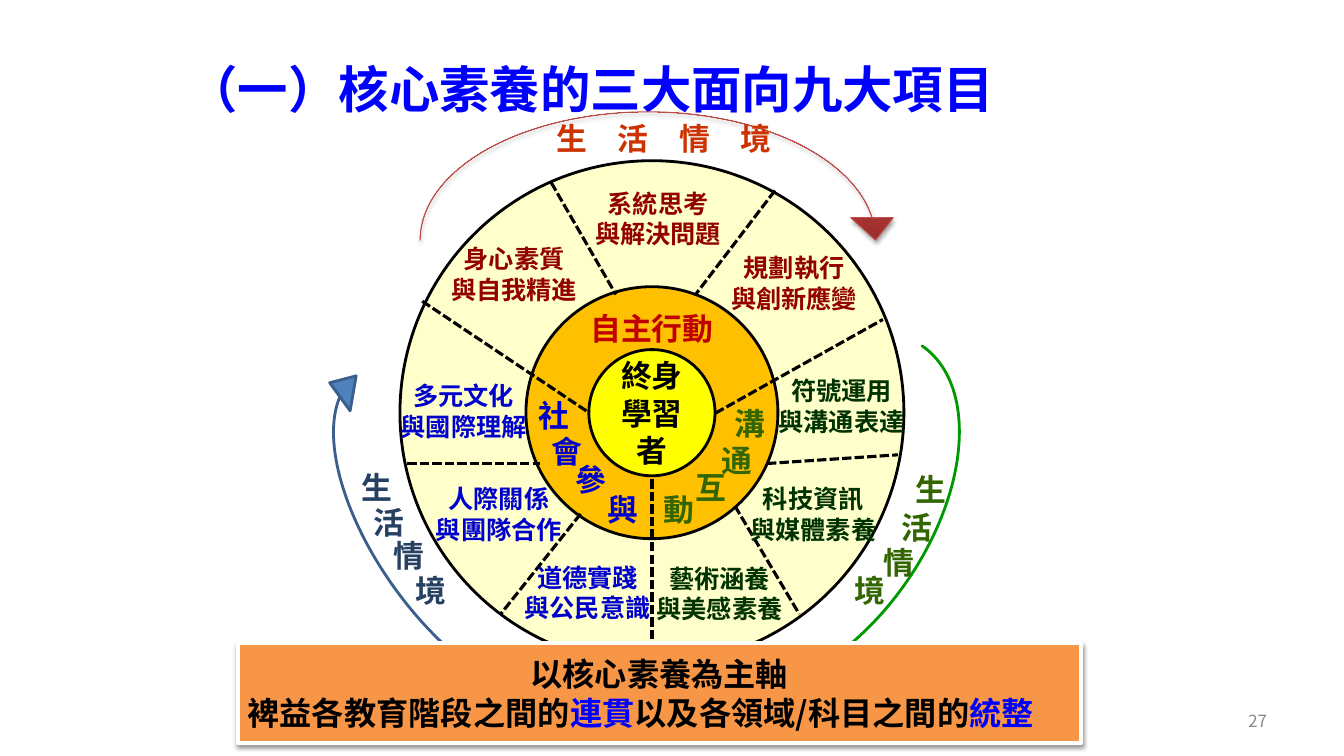
from lxml.etree import SubElement
from pptx import Presentation
from pptx.dml.color import RGBColor
from pptx.enum.dml import MSO_LINE
from pptx.enum.shapes import MSO_CONNECTOR, MSO_SHAPE
from pptx.enum.text import MSO_ANCHOR, PP_ALIGN
from pptx.oxml.ns import qn
from pptx.util import Cm, Pt

FONT = "Noto Sans CJK SC"
LINE_HEIGHT = 1.22
BLACK = RGBColor(0x00, 0x00, 0x00)
WHITE = RGBColor(0xFF, 0xFF, 0xFF)
GRAY = RGBColor(0x89, 0x89, 0x89)
BLUE = RGBColor(0x00, 0x00, 0xFF)
INK_BLUE = RGBColor(0x00, 0x00, 0xCC)
NAVY = RGBColor(0x25, 0x40, 0x61)
STEEL = RGBColor(0x4F, 0x81, 0xBD)
STEEL_EDGE = RGBColor(0x3A, 0x5F, 0x8C)
GREEN = RGBColor(0x00, 0x99, 0x00)
LEAF = RGBColor(0x33, 0x66, 0x00)
FOREST = RGBColor(0x00, 0x33, 0x00)
RED = RGBColor(0xC0, 0x00, 0x00)
MAROON = RGBColor(0x92, 0x00, 0x00)
RUST = RGBColor(0xCC, 0x33, 0x00)
BRICK = RGBColor(0x9C, 0x2F, 0x2D)
BRICK_LIGHT = RGBColor(0xCB, 0x3E, 0x3A)
BRICK_EDGE = RGBColor(0xBF, 0x4C, 0x48)
CREAM = RGBColor(0xFF, 0xFF, 0xCC)
AMBER = RGBColor(0xFF, 0xC0, 0x00)
YELLOW = RGBColor(0xFF, 0xFF, 0x00)
ORANGE = RGBColor(0xF7, 0x96, 0x46)

# All positions and sizes below are in centimetres.
TITLE = "（一）核心素養的三大面向九大項目"
TITLE_BOX = (4.47, 0.91, 24.31, 2.59)
PAGE_NUMBER = "27"
PAGE_NUMBER_BOX = (24.28, 17.65, 7.9, 1.02)

# box, rotation, adjustments, fill, line colour, line width
ARROWS = [
    ((10.59, 2.82, 12.01, 3.23), 0, (0, 0.331, 0.174), None, BRICK_EDGE, 0.75),
    ((16.13, 12.45, 10.67, 3.05), 124.6, (0, 0.31, 0.174), GREEN, GREEN, 2),
    ((5.64, 12.8, 10.31, 2.36), 234, (0, 0.371, 0.272), STEEL, STEEL_EDGE, 2),
]

WHEEL_CENTER = (16.43, 10.4)
RINGS = [(12.7, CREAM), (6.35, AMBER), (3.18, YELLOW)]
CORE_TEXT = "終身\n學習者"
SPOKES = [
    (10.64, 7.59, 14.86, 10.41), (16.43, 16.74, 16.43, 11.99),
    (18.03, 10.41, 22.25, 8.05), (13.89, 4.6, 15.52, 7.42),
    (19.53, 4.8, 17.53, 7.42), (10.26, 11.68, 13.61, 11.68),
    (14.63, 12.95, 12.62, 15.47), (19.33, 11.68, 22.63, 11.46),
    (18.52, 12.75, 20.14, 15.47),
]

HEADINGS = [
    ("生　活　情　境", (13.77, 2.87, 5.99, 1.19), RUST),
    ("自主行動", (14.63, 7.67, 3.66, 1.19), RED),
]
CHARACTER_SIZE = (1.3, 1.19)
CURVED_WORDS = [
    ("生活情境", LEAF, [(22.81, 11.71), (22.48, 12.67), (22.02, 13.56), (21.29, 14.27)]),
    ("生活情境", NAVY, [(8.86, 11.66), (9.17, 12.55), (9.68, 13.39), (10.21, 14.27)]),
    ("社會參與", INK_BLUE, [(13.31, 9.86), (13.64, 10.77), (14.25, 11.48), (15.06, 12.22)]),
    ("溝通互動", LEAF, [(18.26, 10.06), (17.93, 11), (17.27, 11.68), (16.48, 12.22)]),
]
ITEM_SIZE = (3.71, 1.8)
ITEMS = [
    ("系統思考\n與解決問題", (14.73, 4.6), MAROON),
    ("規劃執行\n與創新應變", (18.16, 6.22), MAROON),
    ("身心素質\n與自我精進", (11.1, 5.99), MAROON),
    ("符號運用\n與溝通表達", (19.35, 9.32), FOREST),
    ("科技資訊\n與媒體素養", (18.64, 12.04), FOREST),
    ("藝術涵養\n與美感素養", (16.28, 14.05), FOREST),
    ("多元文化\n與國際理解", (9.83, 9.45), INK_BLUE),
    ("人際關係\n與團隊合作", (10.72, 12.04), INK_BLUE),
    ("道德實踐\n與公民意識", (12.95, 14.02), INK_BLUE),
]
BANNER_BOX = (5.99, 16.21, 21.26, 2.51)
BANNER_HEADING = "以核心素養為主軸"
BANNER_RUNS = [("裨益各教育階段之間的", BLACK), ("連貫", BLUE),
               ("以及各領域/科目之間的", BLACK), ("統整", BLUE)]


def lengths(values):
    return [Cm(value) for value in values]


def format_run(run, size, color, bold=True):
    run.font.name = FONT
    run.font.size = Pt(size)
    run.font.bold = bold
    run.font.color.rgb = color
    SubElement(run.font._element, qn("a:ea"), typeface=FONT)


def format_paragraph(paragraph, size, align):
    paragraph.alignment = align
    paragraph.line_spacing = Pt(size * LINE_HEIGHT)


def write(text_frame, text, size, color, align=PP_ALIGN.LEFT, bold=True):
    text_frame.text = text
    for paragraph in text_frame.paragraphs:
        format_paragraph(paragraph, size, align)
        for run in paragraph.runs:
            format_run(run, size, color, bold)


def add_label(slide, text, box, size, color, align=PP_ALIGN.LEFT):
    text_frame = slide.shapes.add_textbox(*lengths(box)).text_frame
    text_frame.word_wrap = False
    write(text_frame, text, size, color, align)


def add_shape(slide, kind, box, fill, line, width):
    shape = slide.shapes.add_shape(kind, *lengths(box))
    shape.shadow.inherit = False
    if fill is not None:
        shape.fill.solid()
        shape.fill.fore_color.rgb = fill
    shape.line.color.rgb = line
    shape.line.width = Pt(width)
    return shape


def drop_shadow(shape, opacity, distance):
    effects = shape._element.spPr.find(qn("a:effectLst"))
    shadow = SubElement(effects, qn("a:outerShdw"), blurRad=str(Pt(3.1)),
                        dist=str(Pt(distance)), dir="5400000", rotWithShape="0")
    color = SubElement(shadow, qn("a:srgbClr"), val="000000")
    SubElement(color, qn("a:alpha"), val=str(opacity * 1000))


def add_arrows(slide):
    for box, rotation, adjustments, fill, line, width in ARROWS:
        arrow = add_shape(slide, MSO_SHAPE.CURVED_DOWN_ARROW, box, fill, line, width)
        arrow.rotation = rotation
        for index, value in enumerate(adjustments):
            arrow.adjustments[index] = value
        if fill is None:
            arrow.fill.gradient()
            arrow.fill.gradient_angle = 90
            stops = zip(arrow.fill.gradient_stops, (BRICK, BRICK_LIGHT), (0, 0.8))
            for stop, color, position in stops:
                stop.color.rgb = color
                stop.position = position
            drop_shadow(arrow, 35, 1.8)


def add_wheel(slide):
    center_x, center_y = WHEEL_CENTER
    for diameter, fill in RINGS:
        box = (center_x - diameter / 2, center_y - diameter / 2, diameter, diameter)
        ring = add_shape(slide, MSO_SHAPE.OVAL, box, fill, BLACK, 2)
    ring.text_frame.vertical_anchor = MSO_ANCHOR.MIDDLE
    write(ring.text_frame, CORE_TEXT, 22, BLACK, PP_ALIGN.CENTER)
    for ends in SPOKES:
        spoke = slide.shapes.add_connector(MSO_CONNECTOR.STRAIGHT, *lengths(ends))
        spoke.line.color.rgb = BLACK
        spoke.line.width = Pt(2.25)
        spoke.line.dash_style = MSO_LINE.SQUARE_DOT
        SubElement(spoke._element.spPr, qn("a:effectLst"))


def add_banner(slide):
    banner = add_shape(slide, MSO_SHAPE.RECTANGLE, BANNER_BOX, ORANGE, WHITE, 3)
    drop_shadow(banner, 38, 1.6)
    text_frame = banner.text_frame
    text_frame.vertical_anchor = MSO_ANCHOR.MIDDLE
    text_frame.margin_top = text_frame.margin_bottom = Cm(0.25)
    write(text_frame, BANNER_HEADING, 23, BLACK, PP_ALIGN.CENTER)
    paragraph = text_frame.add_paragraph()
    format_paragraph(paragraph, 23, PP_ALIGN.LEFT)
    for text, color in BANNER_RUNS:
        run = paragraph.add_run()
        run.text = text
        format_run(run, 23, color)


def main():
    presentation = Presentation()
    presentation.slide_width, presentation.slide_height = Cm(33.87), Cm(19.05)
    slide = presentation.slides.add_slide(presentation.slide_layouts[5])

    title = slide.shapes.title
    title.left, title.top, title.width, title.height = lengths(TITLE_BOX)
    title.text_frame.vertical_anchor = MSO_ANCHOR.MIDDLE
    write(title.text_frame, TITLE, 36, BLUE)

    number = slide.shapes.add_textbox(*lengths(PAGE_NUMBER_BOX)).text_frame
    number.word_wrap = True
    number.vertical_anchor = MSO_ANCHOR.MIDDLE
    write(number, PAGE_NUMBER, 12, GRAY, PP_ALIGN.RIGHT, bold=False)

    add_arrows(slide)
    add_wheel(slide)
    for text, box, color in HEADINGS:
        add_label(slide, text, box, 22, color)
    for word, color, positions in CURVED_WORDS:
        for character, position in zip(word, positions):
            add_label(slide, character, position + CHARACTER_SIZE, 22, color)
    for text, position, color in ITEMS:
        add_label(slide, text, position + ITEM_SIZE, 18, color, PP_ALIGN.CENTER)
    add_banner(slide)
    presentation.save("out.pptx")


if __name__ == "__main__":
    main()
